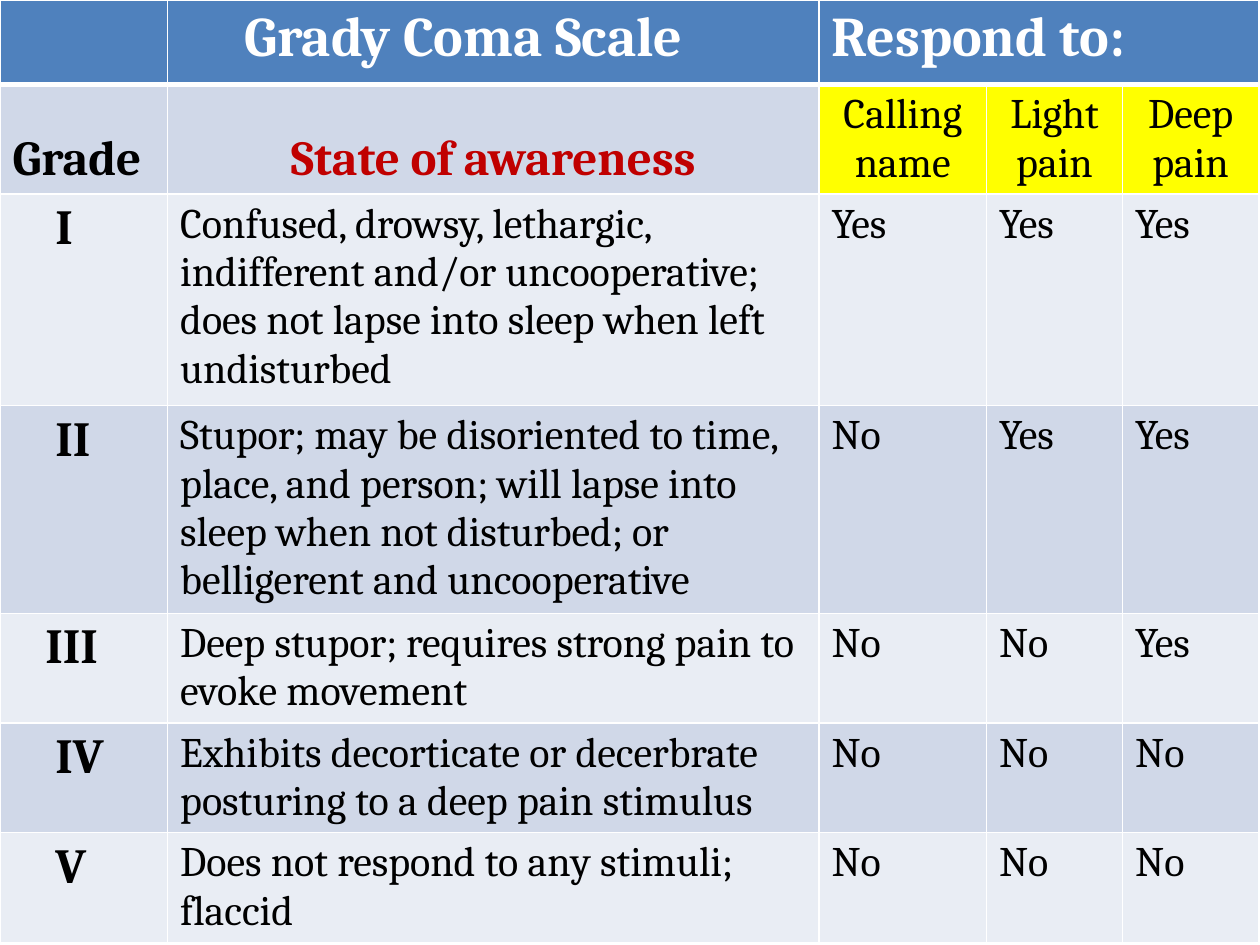
from pptx import Presentation
from pptx.dml.color import RGBColor
from pptx.enum.text import MSO_ANCHOR, PP_ALIGN
from pptx.oxml.ns import qn
from pptx.util import Inches, Pt
from lxml import etree

LEFT, CENTER = PP_ALIGN.LEFT, PP_ALIGN.CENTER
TOP, BOTTOM = MSO_ANCHOR.TOP, MSO_ANCHOR.BOTTOM

BLUE = RGBColor(0x4F, 0x81, 0xBD)
DARK_BAND = RGBColor(0xD0, 0xD8, 0xE8)
LIGHT_BAND = RGBColor(0xE9, 0xED, 0xF4)
YELLOW = RGBColor(0xFF, 0xFF, 0x00)
RED = RGBColor(0xC0, 0x00, 0x00)
WHITE = RGBColor(0xFF, 0xFF, 0xFF)
BLACK = RGBColor(0x00, 0x00, 0x00)

FONT = "Cambria"
COLUMN_WIDTHS = [1.33, 5.17, 1.33, 1.08, 1.08]
ROW_HEIGHTS = [0.67, 0.87, 1.68, 1.65, 0.87, 0.87, 0.87]

RESPONSES = ["Calling name", "Light pain", "Deep pain"]
GRADES = [
    ("I", 0.44, "Confused, drowsy, lethargic, indifferent and/or uncooperative; "
     "does not lapse into sleep when left undisturbed", ["Yes", "Yes", "Yes"]),
    ("II", 0.44, "Stupor; may be disoriented to time, place, and person; will lapse "
     "into sleep when not disturbed; or belligerent and uncooperative", ["No", "Yes", "Yes"]),
    ("III", 0.36, "Deep stupor; requires strong pain to evoke movement",
     ["No", "No", "Yes"]),
    ("IV", 0.44, "Exhibits decorticate or decerbrate posturing to a deep pain stimulus",
     ["No", "No", "No"]),
    ("V", 0.44, "Does not respond to any stimuli; flaccid", ["No", "No", "No"]),
]


def set_borders(cell, top=1, bottom=1):
    properties = cell._tc.get_or_add_tcPr()
    for side, points in (("L", 1), ("R", 1), ("T", top), ("B", bottom)):
        line = etree.SubElement(properties, qn(f"a:ln{side}"), w=str(Pt(points)))
        fill = etree.SubElement(line, qn("a:solidFill"))
        etree.SubElement(fill, qn("a:srgbClr"), val=str(WHITE))


def write_cell(cell, text, size=24, bold=False, color=BLACK, align=LEFT, anchor=TOP,
               indent=0.1):
    cell.vertical_anchor = anchor
    cell.margin_left = Inches(indent)
    para = cell.text_frame.paragraphs[0]
    para.text = text
    para.alignment = align
    para.font.name = FONT
    para.font.size = Pt(size)
    para.font.bold = bold
    para.font.color.rgb = color


def fill_header(table):
    write_cell(table.cell(0, 1), "Grady Coma Scale", 32, True, WHITE, indent=0.61)
    table.cell(0, 2).merge(table.cell(0, 4))
    write_cell(table.cell(0, 2), "Respond to:", 32, True, WHITE)
    write_cell(table.cell(1, 0), "Grade", 28, True, anchor=BOTTOM)
    write_cell(table.cell(1, 1), "State of awareness", 28, True, RED, CENTER, BOTTOM)
    for column, response in enumerate(RESPONSES, 2):
        write_cell(table.cell(1, column), response, align=CENTER, anchor=BOTTOM)


def fill_grades(table):
    for row, (grade, indent, state, answers) in enumerate(GRADES, 2):
        write_cell(table.cell(row, 0), grade, 28, True, indent=indent)
        for column, text in enumerate([state, *answers], 1):
            write_cell(table.cell(row, column), text)


def cell_color(row, column):
    if row == 0:
        return BLUE
    if row == 1 and column >= 2:
        return YELLOW
    return DARK_BAND if row % 2 else LIGHT_BAND


def add_coma_scale(page, left, top, width, height):
    table = page.shapes.add_table(
        len(ROW_HEIGHTS), len(COLUMN_WIDTHS), left, top, width, height).table
    table.horz_banding = False
    for column, inches in zip(table.columns, COLUMN_WIDTHS):
        column.width = Inches(inches)
    for row, inches in zip(table.rows, ROW_HEIGHTS):
        row.height = Inches(inches)
    for row in range(len(ROW_HEIGHTS)):
        for column in range(len(COLUMN_WIDTHS)):
            cell = table.cell(row, column)
            set_borders(cell, top=3 if row == 1 else 1, bottom=3 if row == 0 else 1)
            cell.fill.solid()
            cell.fill.fore_color.rgb = cell_color(row, column)
    fill_header(table)
    fill_grades(table)


def main():
    deck = Presentation()
    deck.slide_width = Inches(10)
    deck.slide_height = Inches(7.5)
    page = deck.slides.add_slide(deck.slide_layouts[6])
    add_coma_scale(page, Inches(0), Inches(0), Inches(10), Inches(7.48))
    deck.save("out.pptx")


if __name__ == "__main__":
    main()
